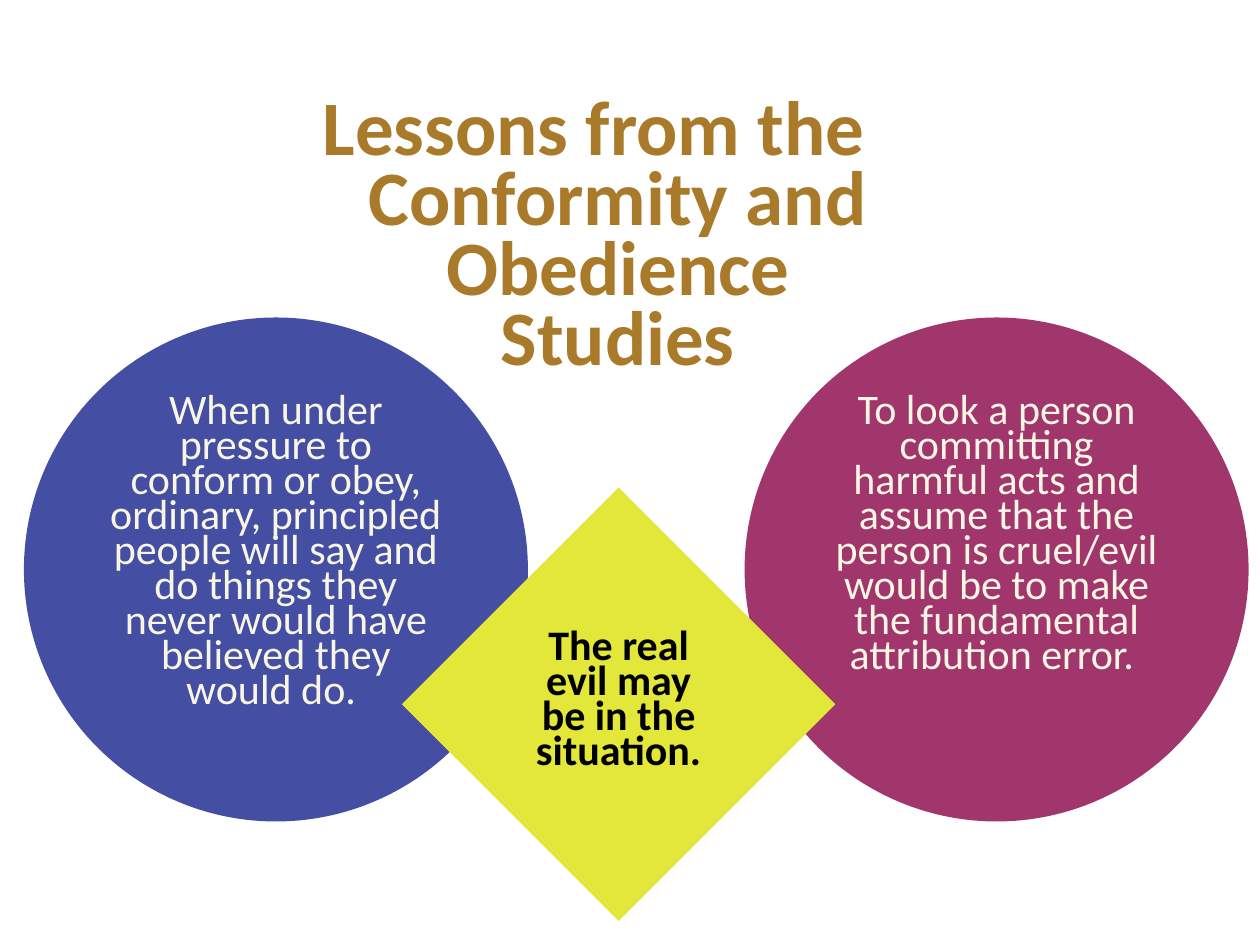
from pptx import Presentation
from pptx.dml.color import RGBColor as Color
from pptx.enum.shapes import MSO_SHAPE as Shape
from pptx.enum.text import MSO_ANCHOR as Anchor, MSO_AUTO_SIZE as AutoSize, PP_ALIGN as Align
from pptx.util import Inches, Pt

COLORS = {
    "title": "AA7A2B",
    "fundamental": "A0366C",
    "pressure": "444EA2",
    "situation": "E3E739",
    "light": "F8F6E3",
    "dark": "000000",
}


def write_text(box, text, size=24, spacing=20, color="light", bold=False, anchor=Anchor.TOP):
    frame = box.text_frame
    frame.word_wrap = True
    frame.auto_size = AutoSize.NONE
    frame.vertical_anchor = anchor
    frame.text = text
    para = frame.paragraphs[0]
    para.alignment = Align.CENTER
    para.line_spacing = Pt(spacing)
    font = para.runs[0].font
    font.name = "Calibri"
    font.size = Pt(size)
    font.bold = bold
    font.color.rgb = Color.from_string(COLORS[color])
    return para


deck = Presentation()
deck.slide_width = Inches(10)
deck.slide_height = Inches(7.5)
page = deck.slides.add_slide(deck.slide_layouts[5])

title = page.shapes.title
title.left, title.top = Inches(2.2), Inches(1.34)
title.width, title.height = Inches(5.03), Inches(1.15)
heading = write_text(title, "Lessons from the Conformity and Obedience Studies",
                     size=44, spacing=40, color="title", bold=True, anchor=Anchor.MIDDLE)
hanging = Inches(0.38)
properties = heading._p.get_or_add_pPr()
properties.set("marL", str(hanging))
properties.set("indent", str(-hanging))

lessons = [
    (Shape.OVAL, 5.91, 2.52, 4, "fundamental",
     "To look a person committing harmful acts and assume that the person is cruel/evil "
     "would be to make the fundamental attribution error. ", {}),
    (Shape.OVAL, 0.19, 2.52, 4, "pressure",
     "When under pressure to conform or obey, ordinary, principled people will say and "
     "do things they never would have believed they would do. ", {}),
    (Shape.FLOWCHART_DECISION, 3.19, 3.87, 3.44, "situation",
     "The real evil may be in the situation.",
     {"color": "dark", "bold": True, "anchor": Anchor.MIDDLE}),
]
for kind, left, top, side, fill, text, style in lessons:
    box = page.shapes.add_shape(kind, Inches(left), Inches(top), Inches(side), Inches(side))
    box.shadow.inherit = False
    box.fill.solid()
    box.fill.fore_color.rgb = Color.from_string(COLORS[fill])
    box.line.fill.background()
    para = write_text(box, text, **style)
    if kind == Shape.FLOWCHART_DECISION:
        para.space_after = Pt(6)

deck.save("out.pptx")
